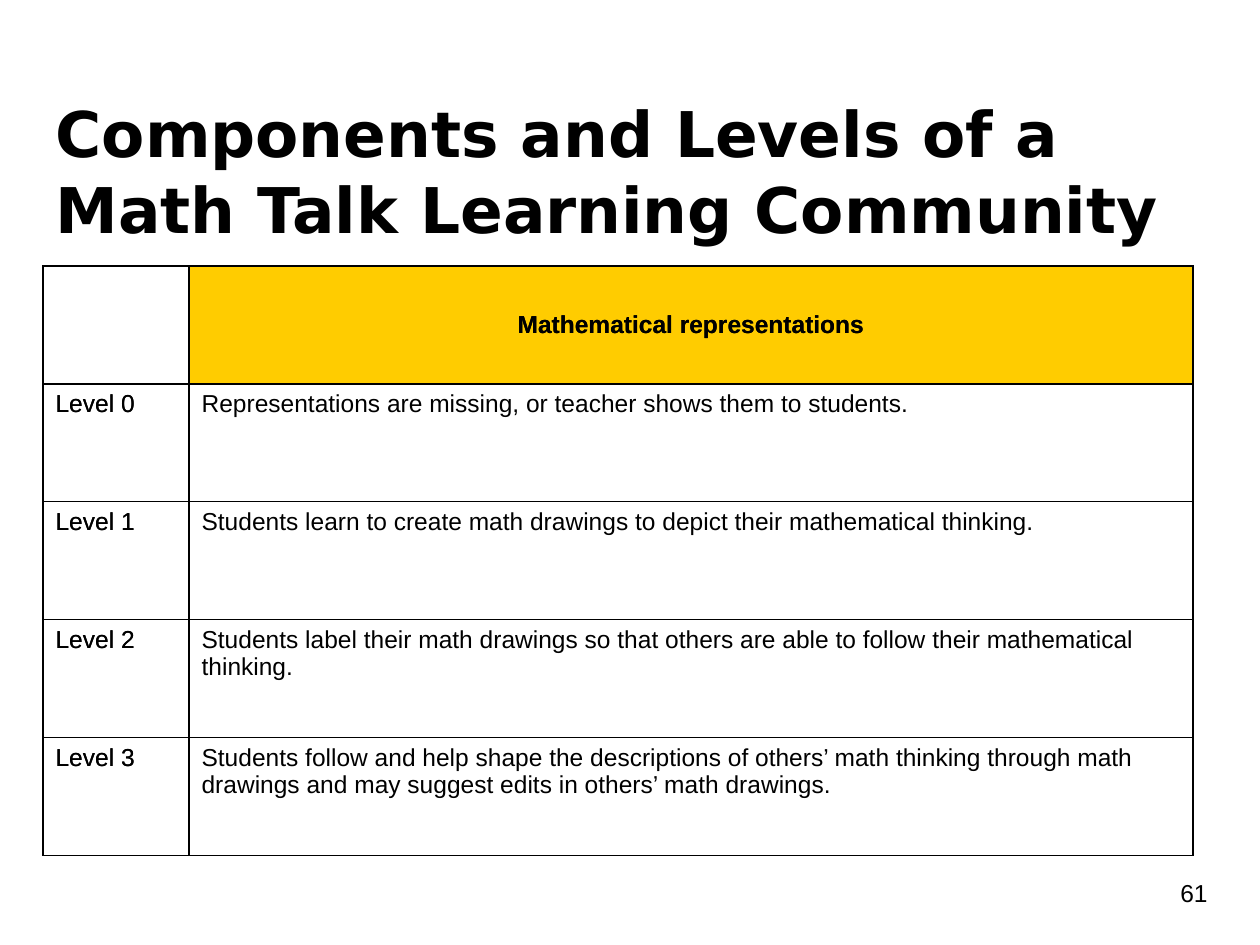
"""Build a slide on the levels of a math talk learning community."""
import pptx
import pptx.dml.color
import pptx.enum.text
import pptx.oxml
import pptx.oxml.ns
import pptx.util

ANCHOR = pptx.enum.text.MSO_ANCHOR
ALIGN = pptx.enum.text.PP_ALIGN
HEAD = "Mathematical representations"
LEVELS = [
    "Representations are missing, or teacher shows them to students.",
    "Students learn to create math drawings to depict their mathematical thinking.",
    "Students label their math drawings so that others are able to follow "
    "their mathematical thinking.",
    "Students follow and help shape the descriptions of others’ math thinking "
    "through math drawings and may suggest edits in others’ math drawings.",
]


def px(n):
    """Turn pixels into EMU."""
    return pptx.util.Emu(round(n * 914400 / 126))


def rgb(code):
    """Turn a hex string into a colour."""
    return pptx.dml.color.RGBColor.from_string(code)


def write(frame, text, size=14, face="Arial", bold=False, align=ALIGN.LEFT):
    """Put one styled paragraph in a text frame."""
    para = frame.paragraphs[0]
    para.text = text
    para.alignment = align
    font = para.font
    font.size = pptx.util.Pt(size)
    font.name = face
    font.bold = bold
    font.color.rgb = rgb("000000")


def inset(frame, anchor):
    """Set even margins, wrapping and the anchor of a text frame."""
    frame.word_wrap = True
    frame.auto_size = pptx.enum.text.MSO_AUTO_SIZE.NONE
    frame.vertical_anchor = anchor
    frame.margin_left = frame.margin_right = pptx.util.Inches(0.1)
    frame.margin_top = frame.margin_bottom = pptx.util.Inches(0.1)


def title(slide, text):
    """Place and fill the title."""
    box = slide.shapes.title
    box.left, box.top, box.width, box.height = map(px, (43, 82, 1174, 106))
    inset(box.text_frame, ANCHOR.TOP)
    write(box.text_frame, text, 36, "DejaVu Sans", True)


def number(slide, text):
    """Add the page number."""
    box = slide.shapes.add_textbox(*map(px, (1168, 857, 76, 72)))
    inset(box.text_frame, ANCHOR.MIDDLE)
    write(box.text_frame, text)


def border(cell, color="000000", width=9525):
    """Draw the four edges of a cell."""
    props = cell._tc.get_or_add_tcPr()
    for side in "LRTB":
        props.append(pptx.oxml.parse_xml(
            f'<a:ln{side} {pptx.oxml.ns.nsdecls("a")} w="{width}"><a:solidFill>'
            f'<a:srgbClr val="{color}"/></a:solidFill></a:ln{side}>'))


def grid(slide, texts, fill=None):
    """Add a table of levels, with an optional head fill."""
    rows = [("", HEAD)] + [(f"Level {i}", t) for i, t in enumerate(texts)]
    table = slide.shapes.add_table(
        len(rows), 2, *map(px, (43, 266, 1150, 118 * len(rows)))).table
    table.first_row = table.horz_banding = False
    for col, width in zip(table.columns, (146, 1004)):
        col.width = px(width)
    for r, row in enumerate(rows):
        table.rows[r].height = px(118)
        for c, text in enumerate(row):
            cell = table.cell(r, c)
            border(cell)
            cell.fill.background()
            head = text == HEAD
            if head:
                cell.vertical_anchor = ANCHOR.MIDDLE
            if head and fill:
                cell.fill.solid()
                cell.fill.fore_color.rgb = rgb(fill)
            write(cell.text_frame, text, bold=head,
                  align=ALIGN.CENTER if head else ALIGN.LEFT)


def main():
    """Build and save the slide."""
    deck = pptx.Presentation()
    deck.slide_width, deck.slide_height = px(1260), px(945)
    slide = deck.slides.add_slide(deck.slide_layouts[5])
    title(slide, "Components and Levels of a Math Talk Learning Community")
    number(slide, "61")
    grid(slide, [""] * len(LEVELS), "FFCC00")
    grid(slide, LEVELS)
    deck.save("out.pptx")


if __name__ == "__main__":
    main()
